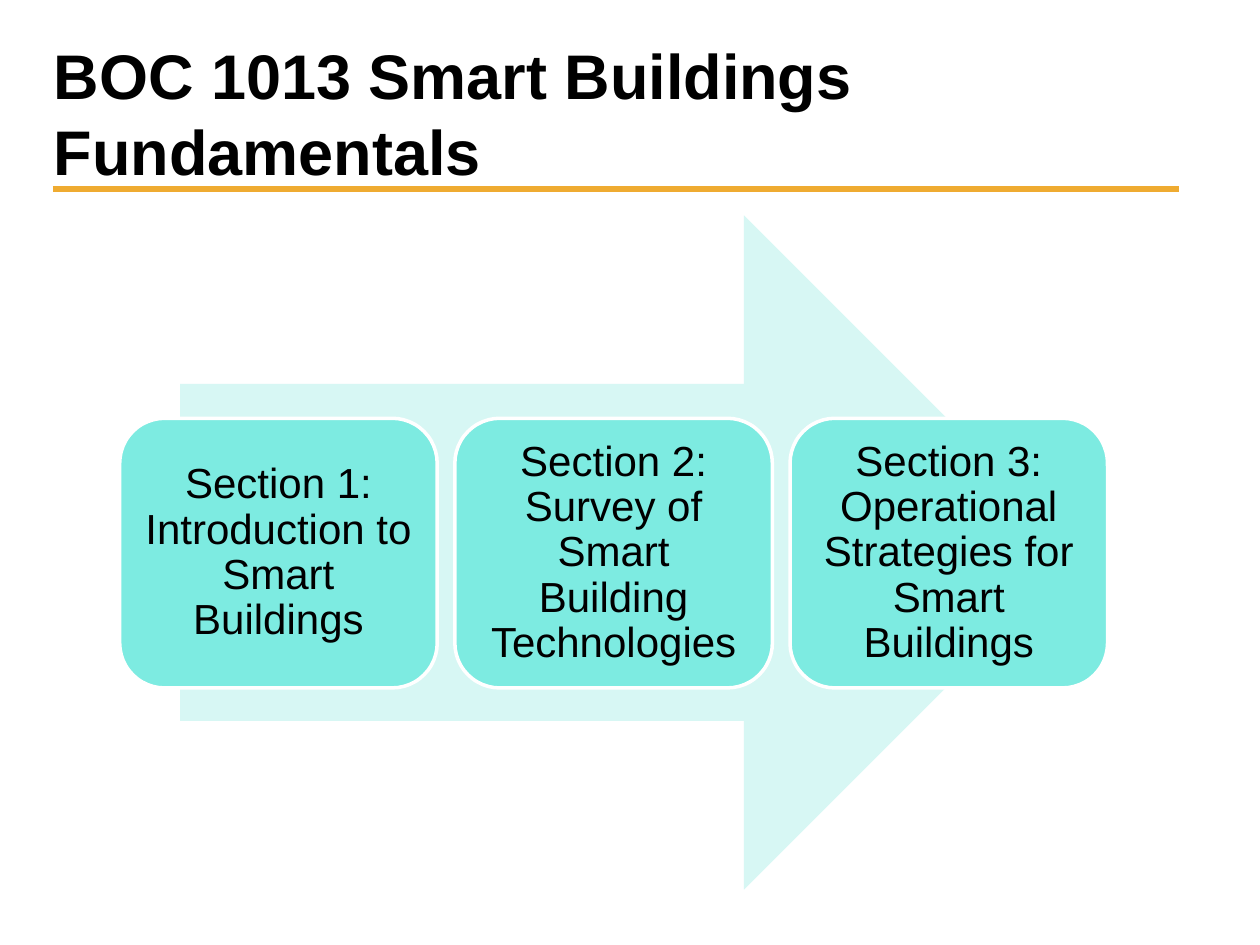
from dataclasses import dataclass

import pptx
import pptx.dml.color
import pptx.enum.shapes
import pptx.enum.text
import pptx.oxml.ns
import pptx.util
from lxml import etree
from pptx.util import Inches

COLORS = {
    "text": "000000",
    "rule": "EFAB31",
    "arrow": "D7F7F4",
    "card": "7DEBE1",
    "outline": "FFFFFF",
}
FONT = "Arial"
SHAPES = pptx.enum.shapes.MSO_SHAPE
ALIGN = pptx.enum.text.PP_ALIGN


@dataclass
class Box:
    left: float
    top: float
    width: float
    height: float

    def lengths(self):
        return [Inches(value) for value in (self.left, self.top, self.width, self.height)]


@dataclass
class Section:
    text: str
    box: Box


CARD_LEFT, CARD_STEP = 0.95, 2.66
SECTION_TEXTS = [
    "Section 1: Introduction to Smart Buildings",
    "Section 2: Survey of Smart Building Technologies",
    "Section 3: Operational Strategies for Smart Buildings",
]
SECTIONS = [
    Section(text, Box(CARD_LEFT + index * CARD_STEP, 3.32, 2.52, 2.14))
    for index, text in enumerate(SECTION_TEXTS)
]


def color(name: str):
    return pptx.dml.color.RGBColor.from_string(COLORS[name])


def write_text(shape, text: str, *, size: int, bold=False, align=ALIGN.LEFT,
               line_spacing=1.0, inset_x=0.1, inset_y=0.05):
    frame = shape.text_frame
    frame.word_wrap = True
    frame.vertical_anchor = pptx.enum.text.MSO_ANCHOR.MIDDLE
    frame.margin_left = frame.margin_right = Inches(inset_x)
    frame.margin_top = frame.margin_bottom = Inches(inset_y)
    paragraph = frame.paragraphs[0]
    paragraph.alignment = align
    paragraph.line_spacing = line_spacing
    run = paragraph.add_run()
    run.text = text
    run.font.name = FONT
    run.font.size = pptx.util.Pt(size)
    run.font.bold = bold
    run.font.color.rgb = color("text")


def add_filled_shape(slide, kind, box: Box, fill: str):
    shape = slide.shapes.add_shape(kind, *box.lengths())
    shape.shadow.inherit = False
    shape.fill.solid()
    shape.fill.fore_color.rgb = color(fill)
    shape.line.fill.background()
    return shape


def add_rule(slide, left: float, right: float, top: float):
    rule = slide.shapes.add_connector(
        pptx.enum.shapes.MSO_CONNECTOR.STRAIGHT,
        Inches(left), Inches(top), Inches(right), Inches(top))
    rule.line.color.rgb = color("rule")
    rule.line.width = pptx.util.Pt(4)
    etree.SubElement(rule._element.spPr, pptx.oxml.ns.qn("a:effectLst"))


def add_section(slide, section: Section):
    card = add_filled_shape(slide, SHAPES.ROUNDED_RECTANGLE, section.box, "card")
    card.line.color.rgb = color("outline")
    card.line.width = pptx.util.Pt(2)
    write_text(card, section.text, size=24, align=ALIGN.CENTER,
               line_spacing=0.9, inset_y=0.1)


def main():
    presentation = pptx.Presentation()
    presentation.slide_width = Inches(10)
    presentation.slide_height = Inches(7.5)
    slide = presentation.slides.add_slide(presentation.slide_layouts[6])

    add_rule(slide, 0.42, 9.36, 1.5)
    title = slide.shapes.add_textbox(*Box(0.33, 0.44, 8.75, 0.9).lengths())
    write_text(title, "BOC 1013 Smart Buildings Fundamentals", size=36, bold=True)
    add_filled_shape(slide, SHAPES.RIGHT_ARROW, Box(1.43, 1.71, 7.15, 5.35), "arrow")
    for section in SECTIONS:
        add_section(slide, section)

    presentation.save("out.pptx")


if __name__ == "__main__":
    main()
